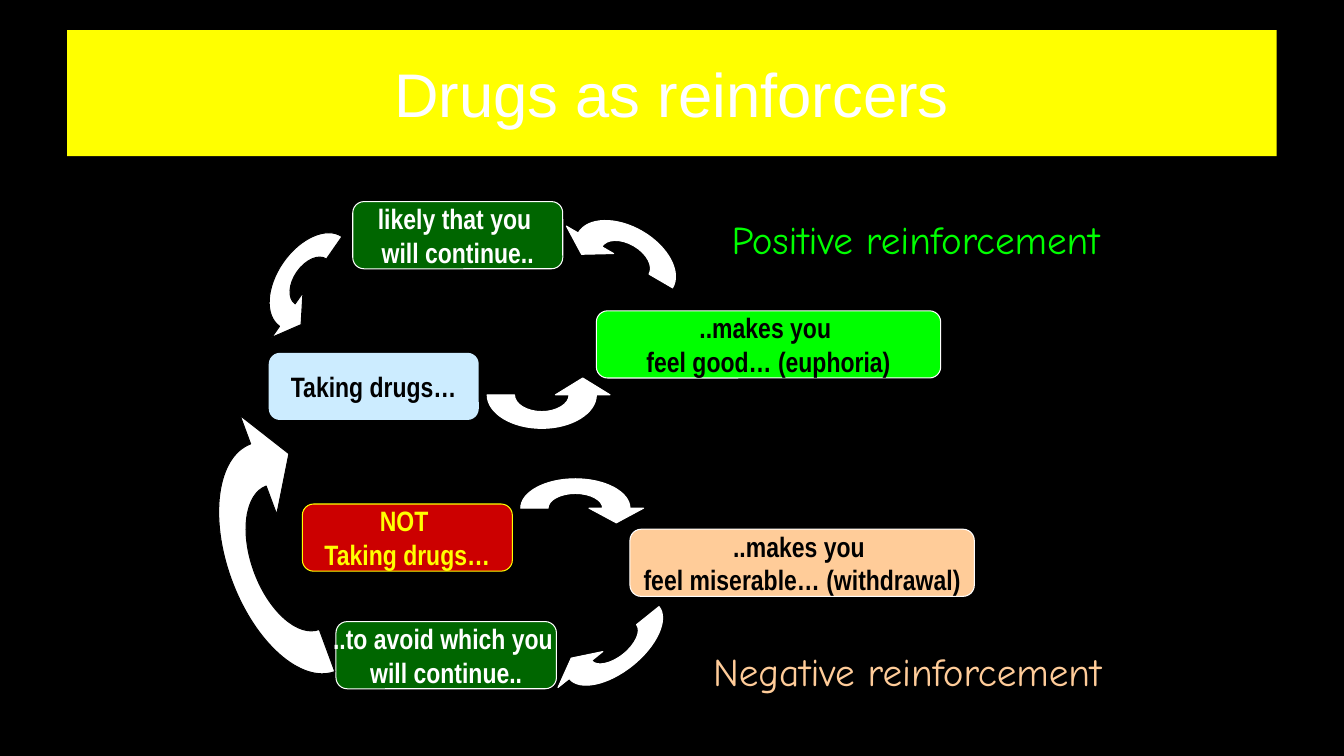
from pptx import Presentation
from pptx.dml.color import RGBColor
from pptx.enum.shapes import MSO_SHAPE
from pptx.enum.text import MSO_ANCHOR, PP_ALIGN
from pptx.oxml.ns import qn
from pptx.util import Inches, Pt

RECTANGLE = MSO_SHAPE.RECTANGLE
ROUNDED = MSO_SHAPE.ROUNDED_RECTANGLE
MIDDLE = MSO_ANCHOR.MIDDLE
CENTER = PP_ALIGN.CENTER

COLORS = {
    "black": "000000",
    "white": "FFFFFF",
    "yellow": "FFFF00",
    "pale blue": "CCECFF",
    "red": "CC0000",
    "bright green": "00FF00",
    "dark green": "006600",
    "peach": "FFCC99",
}

COLUMNS, ROWS = 160, 90
CELL = Inches(1) / 12

# lines, (column, row, columns wide), fill, text colour, outline
BOXES = [
    (["Taking drugs…"], (32, 42, 25), "pale blue", "black", None),
    (["NOT ", "Taking drugs…"], (36, 60, 25), "red", "yellow", "yellow"),
    (["..makes you ", "feel good… (euphoria)"], (71, 37, 41),
     "bright green", "black", "white"),
    (["likely that you ", "will continue.."], (42, 24, 25),
     "dark green", "white", "white"),
    (["..makes you ", "feel miserable… (withdrawal)"], (75, 63, 41),
     "peach", "black", "white"),
    (["..to avoid which you ", "will continue.."], (40, 74, 26.25),
     "dark green", "white", "white"),
]
BOX_ROWS = 8

# (column, row, width, height), rotation in degrees, upside down, inner share, outline
ARROWS = [
    ((58, 43, 13, 8), 0, True, 0.5, "white"),
    ((67.95, 27, 13, 8), 210.2, True, 0.5, "white"),
    ((30.5, 29.5, 13, 8), 124.9, True, 0.5, "black"),
    ((62, 57, 13, 7), 0, False, 0.5, "white"),
    ((66.25, 73, 13.7, 7), 141.3, False, 0.5, "white"),
    ((20.4, 58.65, 28.9, 15.5), 249.7, False, 0.63, "black"),
]
BEZIER = 0.55
CURVE_STARTS = (0, 3, 10, 13)


def color(name):
    return RGBColor.from_string(COLORS[name])


def cells(*counts):
    return [round(count * CELL) for count in counts]


def paint(shape, fill, outline=None):
    shape.shadow.inherit = False
    shape.fill.solid()
    shape.fill.fore_color.rgb = color(fill)
    if outline:
        shape.line.color.rgb = color(outline)
        shape.line.width = Pt(0.75)
    else:
        shape.line.fill.background()


def write(shape, lines, *, size, font, ink, bold=False, wrap=False):
    frame = shape.text_frame
    frame.word_wrap = wrap
    for index, line in enumerate(lines):
        para = frame.add_paragraph() if index else frame.paragraphs[0]
        para.alignment = CENTER
        span = para.add_run()
        span.text = line
        span.font.size = Pt(size)
        span.font.name = font
        span.font.bold = bold
        span.font.color.rgb = color(ink)


def add_title(page, text):
    banner = page.shapes.add_shape(RECTANGLE, *cells(8, 3.6, 144, 15))
    paint(banner, "yellow")
    banner.text_frame.vertical_anchor = MIDDLE
    write(banner, [text], size=44, font="Arial", ink="white", wrap=True)


def add_box(page, lines, place, fill, ink, outline):
    box = page.shapes.add_shape(ROUNDED, *cells(*place, BOX_ROWS))
    paint(box, fill, outline)
    box.text_frame.vertical_anchor = MIDDLE
    write(box, lines, size=20, font="Arial Narrow", ink=ink, bold=True)


def add_label(page, text, column, row, ink):
    label = page.shapes.add_textbox(*cells(column, row, 56, 6.5))
    write(label, [text], size=28, font="Comic Neue", ink=ink)


def arrow_outline(inner):
    """Arch on a unit circle, head at the right; each quarter is two controls and an end."""
    half_circle = [(-1, 0), (-1, -BEZIER), (-BEZIER, -1), (0, -1),
                   (BEZIER, -1), (1, -BEZIER), (1, 0)]
    head = [(1.25, 0), ((1 + inner) / 2, 0.5), (inner - 0.25, 0)]
    return half_circle + head + [(-x * inner, y * inner) for x, y in half_circle]


def bend_arcs(trace):
    """Join each quarter's three line segments into one cubic curve."""
    segments = trace.findall(qn("a:lnTo"))
    for start in CURVE_STARTS:
        curve = trace.makeelement(qn("a:cubicBezTo"))
        segments[start].addprevious(curve)
        for segment in segments[start:start + 3]:
            curve.append(segment[0])
            trace.remove(segment)


def add_curved_arrow(page, place, rotation, upside_down, inner, outline):
    left, top, width, height = cells(*place)
    points = [(round(left + (x + 1) * width / 2), round(top + (y + 1) * height / 2))
              for x, y in arrow_outline(inner)]
    builder = page.shapes.build_freeform(*points[0])
    builder.add_line_segments(points[1:], close=True)
    arrow = builder.convert_to_shape()
    paint(arrow, "white", outline)

    # The frame holds the whole ellipse, so the head reaches beyond it.
    trace = arrow._element.find(".//" + qn("a:path"))
    bend_arcs(trace)
    trace.set("w", str(width))
    trace.set("h", str(height))
    arrow.width, arrow.height = width, height
    arrow.rotation = rotation
    if upside_down:
        arrow._element.spPr.find(qn("a:xfrm")).set("flipV", "1")


def main():
    deck = Presentation()
    deck.slide_width, deck.slide_height = cells(COLUMNS, ROWS)
    page = deck.slides.add_slide(deck.slide_layouts[6])
    page.background.fill.solid()
    page.background.fill.fore_color.rgb = color("black")

    add_title(page, "Drugs as reinforcers")
    for box in BOXES:
        add_box(page, *box)
    add_label(page, "Positive reinforcement", 81, 25, "bright green")
    add_label(page, "Negative reinforcement", 80, 76.5, "peach")
    for arrow in ARROWS:
        add_curved_arrow(page, *arrow)
    deck.save("out.pptx")


if __name__ == "__main__":
    main()
